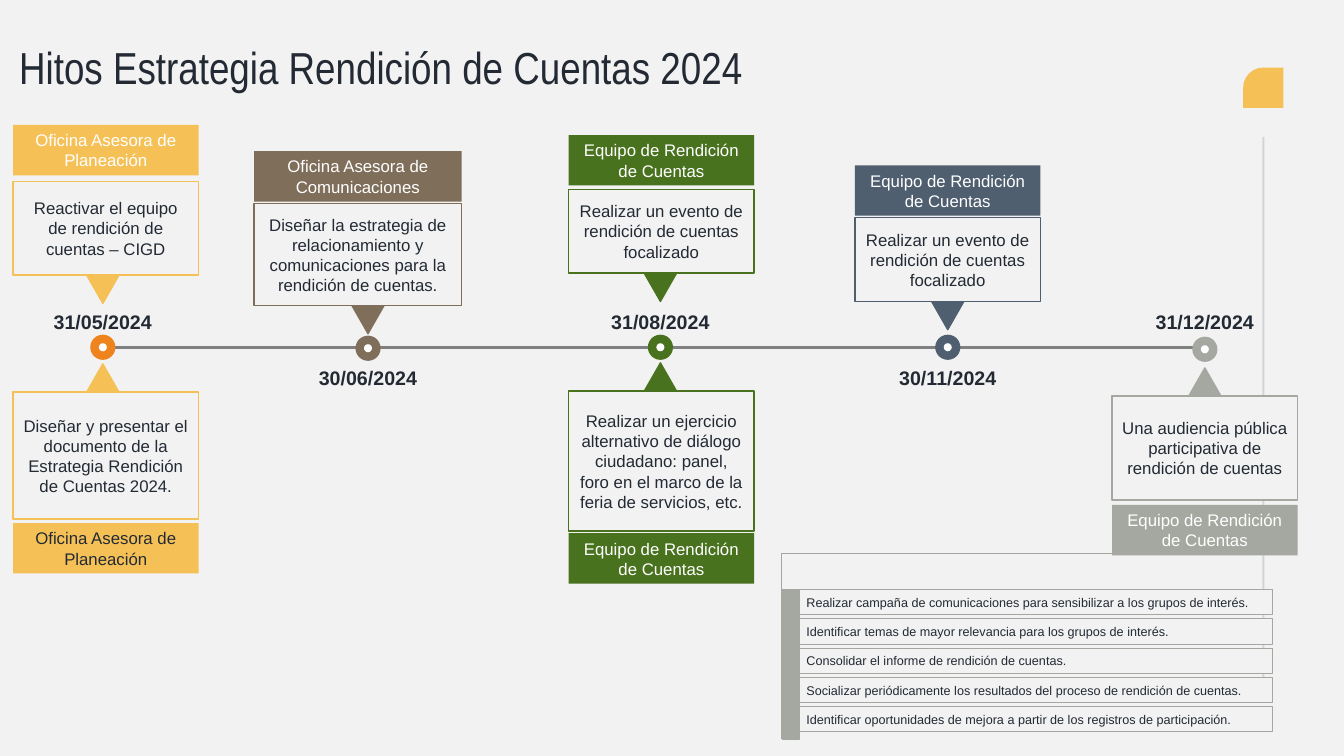
from dataclasses import dataclass

from lxml.etree import SubElement
from pptx import Presentation
from pptx.dml.color import RGBColor
from pptx.enum.shapes import MSO_CONNECTOR, MSO_SHAPE
from pptx.enum.text import MSO_ANCHOR, PP_ALIGN
from pptx.oxml.ns import qn
from pptx.util import Inches, Pt

COLOURS = {
    "background": "F2F2F2",
    "text": "232A34",
    "white": "FFFFFF",
    "axis": "808080",
    "yellow": "F5C157",
    "orange": "EF831E",
    "brown": "7F6E5A",
    "green": "49721E",
    "blue": "4F5F6F",
    "grey": "A5A8A1",
}
LABEL_HEIGHT = 0.5
POINTER_WIDTH, POINTER_HEIGHT = 0.32, 0.28
RING_SIZE, DOT_SIZE = 0.25, 0.08
DATE_WIDTH, DATE_HEIGHT = 1.65, 0.34
DATE_ABOVE, DATE_BELOW = 3.02, 3.58

PLANNING = "Oficina Asesora de Planeación"
COMMUNICATIONS = "Oficina Asesora de Comunicaciones"
ACCOUNTABILITY = "Equipo de Rendición de Cuentas"
FOCUSED_EVENT = "Realizar un evento de rendición de cuentas focalizado"
ACTIVITIES = [
    "Realizar campaña de comunicaciones para sensibilizar a los grupos de interés.",
    "Identificar temas de mayor relevancia para los grupos de interés.",
    "Consolidar el informe de rendición de cuentas.",
    "Socializar periódicamente los resultados del proceso de rendición de cuentas.",
    "Identificar oportunidades de mejora a partir de los registros de participación.",
]


@dataclass
class Milestone:
    date: str
    centre: float
    date_top: float
    colour: str
    ring_colour: str
    ring_top: float = 3.32


@dataclass
class Card:
    """A task box with its owner label; it lies above or below the axis."""
    milestone: int
    left: float
    box_top: float
    box_height: float
    label_top: float
    owner: str
    task: str
    width: float = 1.84
    label_text: str = "white"


MILESTONES = [
    Milestone("31/05/2024", 1.02, DATE_ABOVE, "yellow", "orange"),
    Milestone("30/06/2024", 3.65, DATE_BELOW, "brown", "brown", 3.33),
    Milestone("31/08/2024", 6.55, DATE_ABOVE, "green", "green"),
    Milestone("30/11/2024", 9.4, DATE_BELOW, "blue", "blue"),
    Milestone("31/12/2024", 11.95, DATE_ABOVE, "grey", "grey", 3.34),
]
CARDS = [
    Card(0, 0.13, 1.8, 0.93, 1.24, PLANNING,
         "Reactivar el equipo de rendición de cuentas – CIGD"),
    Card(0, 0.13, 3.89, 1.26, 5.19, PLANNING,
         "Diseñar y presentar el documento de la Estrategia Rendición de Cuentas 2024.",
         label_text="text"),
    Card(1, 2.52, 2.02, 1.01, 1.5, COMMUNICATIONS,
         "Diseñar la estrategia de relacionamiento y comunicaciones para la "
         "rendición de cuentas.", width=2.06),
    Card(2, 5.64, 1.88, 0.83, 1.34, ACCOUNTABILITY, FOCUSED_EVENT),
    Card(2, 5.64, 3.88, 1.39, 5.29, ACCOUNTABILITY,
         "Realizar un ejercicio alternativo de diálogo ciudadano: panel, foro en el "
         "marco de la feria de servicios, etc."),
    Card(3, 8.48, 2.16, 0.83, 1.64, ACCOUNTABILITY, FOCUSED_EVENT),
    Card(4, 11.03, 3.93, 1.03, 5.01, ACCOUNTABILITY,
         "Una audiencia pública participativa de rendición de cuentas"),
]


def rgb(colour):
    return RGBColor.from_string(COLOURS[colour])


def write(shape, text, size, colour="text", align=PP_ALIGN.CENTER, bold=False,
          font="Arial"):
    frame = shape.text_frame
    frame.word_wrap = True
    frame.vertical_anchor = MSO_ANCHOR.MIDDLE
    paragraph = frame.paragraphs[0]
    paragraph.alignment = align
    run = paragraph.add_run()
    run.text = text
    run.font.name = font
    run.font.size = Pt(size)
    run.font.bold = bold
    run.font.color.rgb = rgb(colour)
    return paragraph


def add_shape(slide, kind, left, top, width, height, fill, line=None, line_width=1):
    shape = slide.shapes.add_shape(
        kind, Inches(left), Inches(top), Inches(width), Inches(height))
    shape.shadow.inherit = False
    shape.fill.solid()
    shape.fill.fore_color.rgb = rgb(fill)
    if line:
        shape.line.color.rgb = rgb(line)
        shape.line.width = Pt(line_width)
    else:
        shape.line.fill.background()
    return shape


def add_line(slide, start, end, colour, width, opacity=None):
    """Draw a straight line; opacity is a percentage."""
    line = slide.shapes.add_connector(
        MSO_CONNECTOR.STRAIGHT, *(Inches(value) for value in (*start, *end)))
    line.line.color.rgb = rgb(colour)
    line.line.width = Pt(width)
    properties = line._element.spPr
    if opacity is not None:
        tint = properties.find(".//" + qn("a:srgbClr"))
        SubElement(tint, qn("a:alpha")).set("val", str(opacity * 1000))
    SubElement(properties, qn("a:effectLst"))


def add_title(slide):
    title = slide.shapes.title
    title.left, title.top = Inches(0.09), Inches(0.4)
    title.width, title.height = Inches(13.2), Inches(0.59)
    paragraph = write(title, "Hitos Estrategia Rendición de Cuentas 2024", 32,
                      align=PP_ALIGN.LEFT, font="Arial Narrow")
    paragraph.line_spacing = 0.9


def add_decoration(slide):
    corner = add_shape(slide, MSO_SHAPE.ROUND_1_RECTANGLE,
                       12.33, 0.67, 0.4, 0.4, "yellow")
    corner.adjustments[0] = 0.5
    corner.rotation = 270
    add_line(slide, (12.53, 1.36), (12.53, 6.86), "text", 1.5, opacity=15)


def add_milestone(slide, milestone):
    add_shape(slide, MSO_SHAPE.OVAL, milestone.centre - RING_SIZE / 2,
              milestone.ring_top, RING_SIZE, RING_SIZE, milestone.ring_colour)
    add_shape(slide, MSO_SHAPE.OVAL, milestone.centre - DOT_SIZE / 2,
              milestone.ring_top + (RING_SIZE - DOT_SIZE) / 2,
              DOT_SIZE, DOT_SIZE, "white")
    date = slide.shapes.add_textbox(
        Inches(milestone.centre - DATE_WIDTH / 2), Inches(milestone.date_top),
        Inches(DATE_WIDTH), Inches(DATE_HEIGHT))
    write(date, milestone.date, 14, bold=True)


def add_card(slide, card):
    milestone = MILESTONES[card.milestone]
    colour = milestone.colour
    above = card.label_top < card.box_top
    pointer_top = card.box_top + (card.box_height if above else -POINTER_HEIGHT)
    pointer = add_shape(slide, MSO_SHAPE.ISOSCELES_TRIANGLE,
                        milestone.centre - POINTER_WIDTH / 2, pointer_top,
                        POINTER_WIDTH, POINTER_HEIGHT, colour, colour)
    pointer.rotation = 180 if above else 0
    box = add_shape(slide, MSO_SHAPE.RECTANGLE, card.left, card.box_top,
                    card.width, card.box_height, "background", colour)
    write(box, card.task, 12)
    label = add_shape(slide, MSO_SHAPE.RECTANGLE, card.left, card.label_top,
                      card.width, LABEL_HEIGHT, colour)
    write(label, card.owner, 12, card.label_text)


def add_activities(slide):
    for index, activity in enumerate(ACTIVITIES):
        row = add_shape(slide, MSO_SHAPE.RECTANGLE, 7.9, 5.85 + index * 0.29,
                        4.72, 0.25, "background", "grey", 0.75)
        write(row, activity, 9, align=PP_ALIGN.LEFT)
    add_line(slide, (11.15, 5.49), (7.75, 5.49), "grey", 0.5)
    add_line(slide, (7.75, 5.5), (7.75, 7.33), "grey", 0.5)
    add_shape(slide, MSO_SHAPE.RECTANGLE, 7.76, 5.85, 0.17, 1.48, "grey", "grey")


def main():
    presentation = Presentation()
    presentation.slide_width, presentation.slide_height = Inches(13.33), Inches(7.5)
    slide = presentation.slides.add_slide(presentation.slide_layouts[5])
    slide.background.fill.solid()
    slide.background.fill.fore_color.rgb = rgb("background")
    add_title(slide)
    add_decoration(slide)
    add_line(slide, (1.06, 3.45), (11.97, 3.45), "axis", 2.25)
    for milestone in MILESTONES:
        add_milestone(slide, milestone)
    for card in CARDS:
        add_card(slide, card)
    add_activities(slide)
    presentation.save("out.pptx")


if __name__ == "__main__":
    main()
